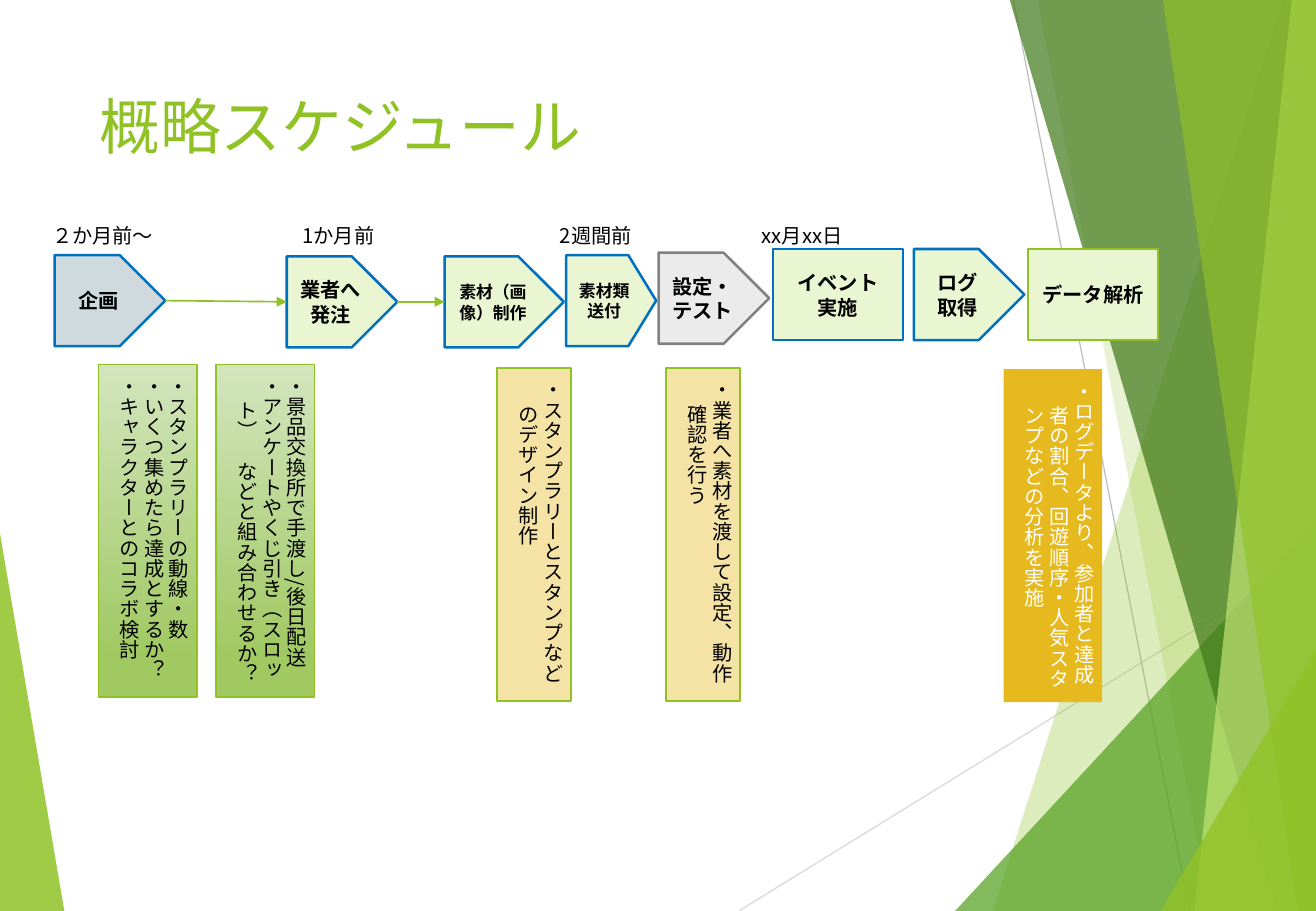
import pptx
import pptx.util
import pptx.dml.color
import pptx.enum.shapes
import pptx.enum.text
import pptx.oxml
import pptx.oxml.ns
from pptx.util import Inches

WIDE, HIGH = 10.83, 7.5
LIME, BLUE, GRAY, PALE = "90C226", "0070C0", "808080", "EAF6D1"
GREEN, SAND, GOLD = ("D3E5BE", "A0C962"), "F5E3A5", "E6B91E"


def shade(code):
    return pptx.dml.color.RGBColor.from_string(code)


def node(host, tag, **attrs):
    item = pptx.oxml.ns.qn(tag)
    child = host.makeelement(item, attrs)
    host.append(child)
    return child


class Board:
    font = "Noto Sans CJK JP"
    kinds = pptx.enum.shapes.MSO_SHAPE
    align = pptx.enum.text.PP_ALIGN
    anchor = pptx.enum.text.MSO_ANCHOR

    def __init__(self, slide):
        self.slide = slide
        self.shapes = slide.shapes

    def paint(self, shape, fill, line=None, width=1):
        shape.shadow.inherit = False
        if isinstance(fill, tuple):
            shape.fill.gradient()
            shape.fill.gradient_angle = 270
            for stop, code, place in zip(shape.fill.gradient_stops, fill, (0, 0.88)):
                stop.color.rgb = shade(code)
                stop.position = place
        else:
            shape.fill.solid()
            shape.fill.fore_color.rgb = shade(fill)
        if line:
            shape.line.color.rgb = shade(line)
            shape.line.width = pptx.util.Pt(width)
        else:
            shape.line.fill.background()

    def letter(self, shape, text, size=12, color="000000", bold=False,
               font=None, align=None, anchor=None):
        frame = shape.text_frame
        frame.text = text
        frame.word_wrap = True
        frame.vertical_anchor = anchor or self.anchor.TOP
        for para in frame.paragraphs:
            para.alignment = align or self.align.LEFT
            para.line_spacing = pptx.util.Pt(round(size * 1.22, 1))
            for run in para.runs:
                run.font.name = font or self.font
                run.font.size = pptx.util.Pt(size)
                run.font.bold = bold
                run.font.color.rgb = shade(color)
                node(run.font._element, "a:ea", typeface=font or self.font)

    def label(self, text, left, top, width, height, **style):
        box = self.shapes.add_textbox(*map(Inches, (left, top, width, height)))
        self.letter(box, text, **style)

    def facet(self, points, color, alpha):
        spots = [(Inches(x), Inches(y)) for x, y in points]
        form = self.shapes.build_freeform(*spots[0], scale=1.0)
        form.add_line_segments(spots[1:], close=True)
        shape = form.convert_to_shape()
        self.paint(shape, color)
        tint = shape._element.spPr.find(".//" + pptx.oxml.ns.qn("a:srgbClr"))
        node(tint, "a:alpha", val=str(alpha * 1000))

    def line(self, start, end, color, width):
        straight = pptx.enum.shapes.MSO_CONNECTOR.STRAIGHT
        link = self.shapes.add_connector(straight, *map(Inches, start + end))
        link.line.color.rgb = shade(color)
        link.line.width = pptx.util.Pt(width)
        node(link._element.spPr, "a:effectLst")
        return link

    def arrow(self, first, last):
        link = self.line((0, 0), (1, 1), LIME, 1)
        link.begin_connect(first, 3)
        link.end_connect(last, 1)
        node(link.line._get_or_add_ln(), "a:tailEnd", type="triangle")

    def step(self, text, left, top, width, fill=PALE, line=BLUE, size=12, point=0.5):
        shape = self.shapes.add_shape(
            self.kinds.PENTAGON, *map(Inches, (left, top, width, 0.75)))
        shape.adjustments[0] = point
        self.paint(shape, fill, line, 1.5)
        self.letter(shape, text, size, bold=True,
                    align=self.align.CENTER, anchor=self.anchor.MIDDLE)
        return shape

    def note(self, text, left, top, width, fill, line=LIME, color="000000", hang=True):
        shape = self.shapes.add_shape(
            self.kinds.RECTANGLE, *map(Inches, (left, top, width, 2.74)))
        self.paint(shape, fill, line)
        self.letter(shape, text, color=color)
        shape.text_frame._txBody.bodyPr.set("vert", "eaVert")
        if hang:
            for para in shape.text_frame.paragraphs:
                props = para._p.get_or_add_pPr()
                props.set("marL", str(Inches(0.2)))
                props.set("indent", str(-Inches(0.2)))


def main():
    deck = pptx.Presentation()
    deck.slide_width, deck.slide_height = Inches(WIDE), Inches(HIGH)
    board = Board(deck.slides.add_slide(deck.slide_layouts[6]))

    board.facet([(0, 4.39), (0.53, HIGH), (0, HIGH)], LIME, 85)
    board.line((6.08, HIGH), (WIDE, 4.57), "D9D9D9", 0.75)
    board.line((8.34, 0), (9.79, HIGH), "BFBFBF", 0.75)
    top, base = (WIDE, 0), (WIDE, HIGH)
    for points, color, alpha in (
        ([(10.56, 0), (8.17, HIGH), base, top], LIME, 30),
        ([(8.54, 0), (9.96, HIGH), base, top], LIME, 20),
        ([(7.86, HIGH), (WIDE, 4.29), base], "54A021", 72),
        ([(8.31, 0), (10.51, HIGH), base, top], "3F7819", 70),
        ([(10.63, 0), (9.83, HIGH), base, top], "C0E474", 70),
        ([(9.57, 0), (10.68, HIGH), base, top], LIME, 65),
        ([(9.55, HIGH), (WIDE, 5.35), base], LIME, 80),
    ):
        board.facet(points, color, alpha)

    board.label("概略スケジュール", 0.72, 0.67, 7.52, 1.44,
                size=36, color=LIME, font="Cabin")
    for text, left in (("２か月前～", 0.33), ("1か月前", 2.39),
                       ("2週間前", 4.51), ("xx月xx日", 6.17)):
        board.label(text, left, 1.79, 1.27, 0.3)

    plan = board.step("企画", 0.45, 2.1, 0.91, fill="CFDADF")
    order = board.step("業者へ発注", 2.36, 2.11, 0.91)
    craft = board.step("素材（画像）制作", 3.66, 2.11, 0.98, size=10)
    board.step("素材類送付", 4.66, 2.1, 0.74, size=10, point=0.31)
    board.step("設定・テスト", 5.42, 2.08, 0.91, fill="EBEBEB", line=GRAY)
    board.step("イベント\n実施", 6.36, 2.05, 1.07, point=0)
    board.step("ログ\n取得", 7.52, 2.05, 0.91)
    board.step("データ解析", 8.46, 2.05, 1.07, line=LIME, point=0)
    board.arrow(plan, order)
    board.arrow(order, craft)

    board.note("・スタンプラリーの動線・数\n・いくつ集めたら達成とするか？\n"
               "・キャラクターとのコラボ検討", 0.81, 3, 0.81, GREEN, hang=False)
    board.note("・景品交換所で手渡し/後日配送\n"
               "・アンケートやくじ引き（スロット）　などと組み合わせるか？",
               1.78, 3, 0.81, GREEN)
    board.note("・スタンプラリーとスタンプなどのデザイン制作", 4.09, 3.03, 0.61, SAND)
    board.note("・業者へ素材を渡して設定、動作確認を行う", 5.48, 3.03, 0.61, SAND)
    board.note("・ログデータより、参加者と達成者の割合、回遊順序・人気スタンプなどの分析を実施",
               8.26, 3.04, 0.81, GOLD, line=None, color="FFFFFF")

    deck.save("out.pptx")


if __name__ == "__main__":
    main()
